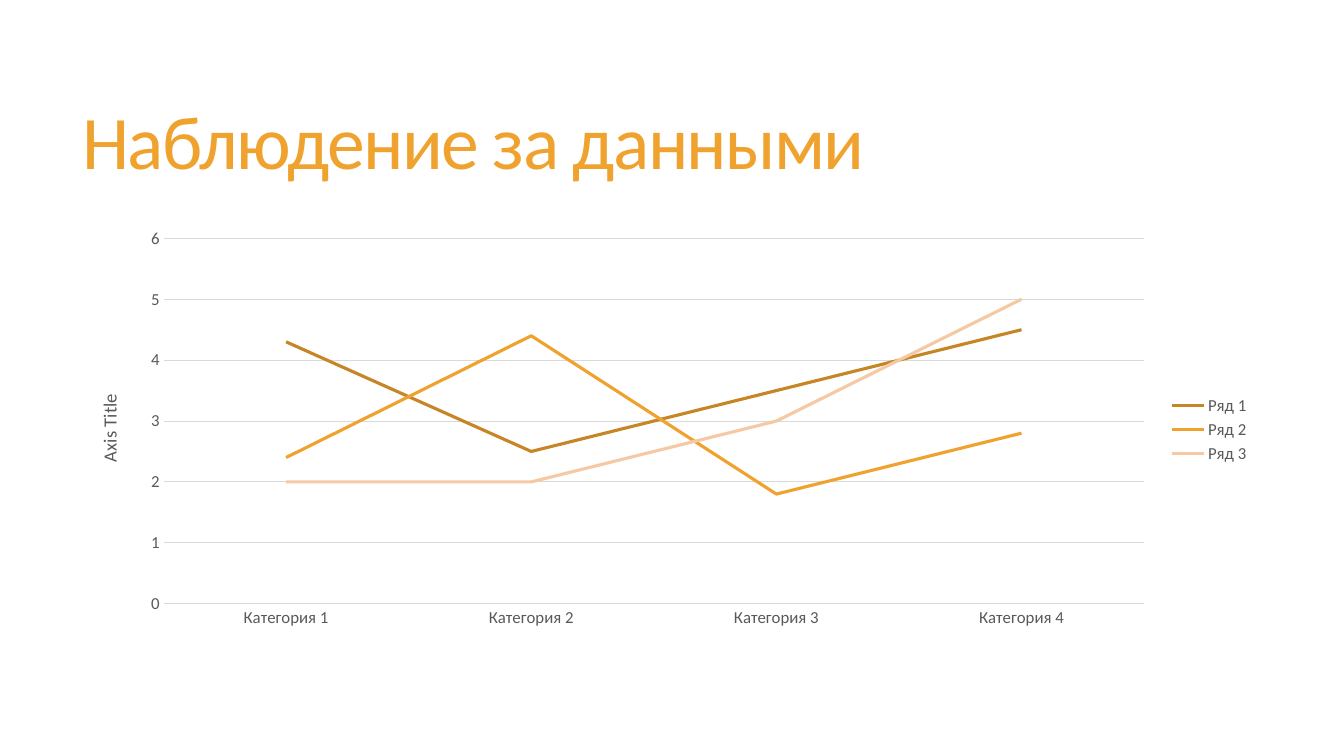
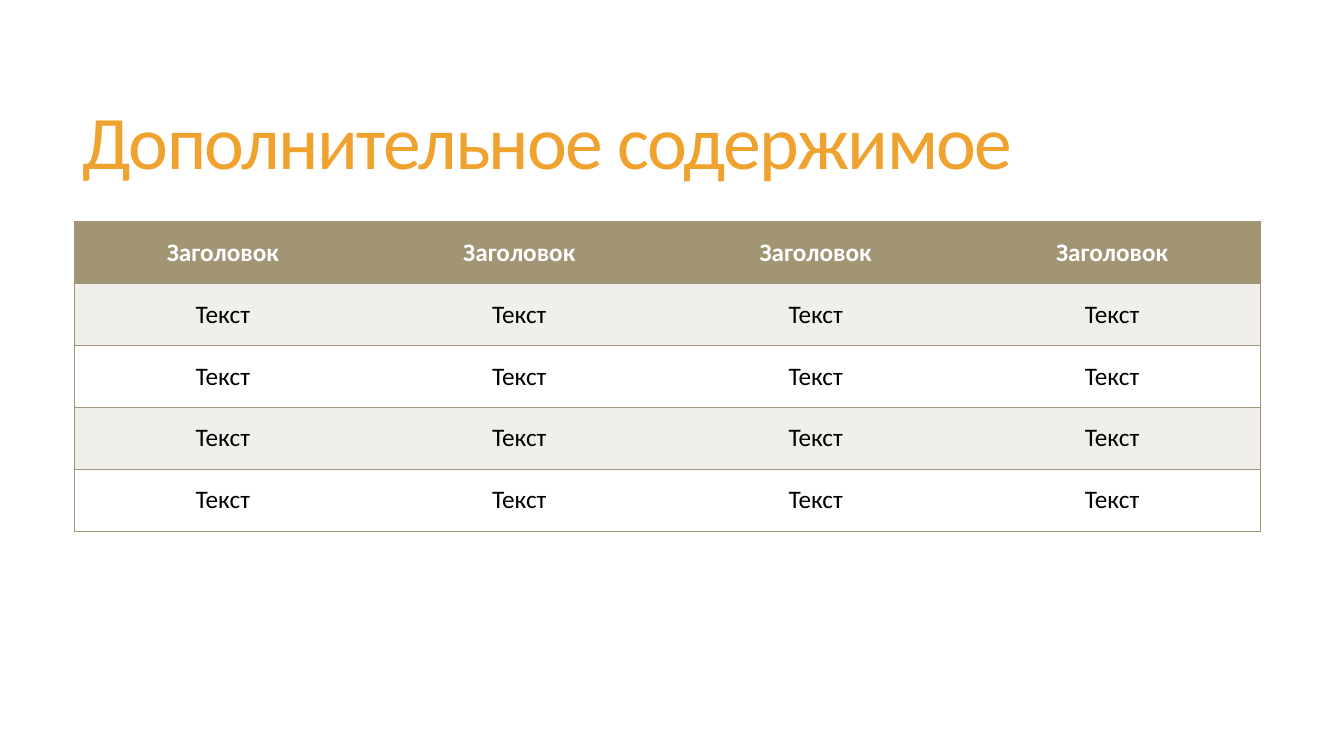
from lxml.etree import SubElement
from pptx import Presentation
from pptx.chart.data import CategoryChartData
from pptx.dml.color import RGBColor
from pptx.enum.chart import XL_CHART_TYPE, XL_LEGEND_POSITION, XL_TICK_MARK
from pptx.enum.text import MSO_ANCHOR, MSO_AUTO_SIZE, PP_ALIGN
from pptx.oxml.ns import qn
from pptx.util import Inches, Pt

FONT = "Calibri"
AMBER = RGBColor(0xF0, 0xA2, 0x2E)
BRONZE = RGBColor(0xC7, 0x86, 0x26)
PEACH = RGBColor(0xF5, 0xC9, 0xA4)
KHAKI = RGBColor(0xA1, 0x95, 0x74)
PALE = RGBColor(0xF0, 0xEF, 0xEB)
WHITE = RGBColor(0xFF, 0xFF, 0xFF)
BLACK = RGBColor(0, 0, 0)
GRAY = RGBColor(0x59, 0x59, 0x59)
GRID_GRAY = RGBColor(0xD9, 0xD9, 0xD9)

deck = Presentation()
deck.slide_width, deck.slide_height = Inches(13.33), Inches(7.5)
COL, ROW = deck.slide_width / 180, deck.slide_height / 75
LEFT, TOP, WIDTH = int(10 * COL), int(22 * ROW), int(158.8 * COL)


def write(frame, text, size, color, bold=False, align=PP_ALIGN.LEFT, spacing=None, tracking=None):
    paragraph = frame.paragraphs[0]
    paragraph.alignment = align
    if spacing:
        paragraph.line_spacing = spacing
    run = paragraph.add_run()
    run.text = text
    run.font.name, run.font.size, run.font.bold = FONT, Pt(size), bold
    run.font.color.rgb = color
    if tracking:
        run.font._element.set("spc", str(tracking))


def add_titled_slide(heading):
    slide = deck.slides.add_slide(deck.slide_layouts[5])
    title = slide.shapes.title
    title.left, title.top = int(9.7 * COL), int(5.5 * ROW)
    title.width, title.height = int(159 * COL), int(18.1 * ROW)
    title.text_frame.word_wrap = True
    title.text_frame.auto_size = MSO_AUTO_SIZE.NONE
    title.text_frame.vertical_anchor = MSO_ANCHOR.MIDDLE
    write(title.text_frame, heading, 54, AMBER, spacing=0.85, tracking=-120)
    return slide


chart_slide = add_titled_slide("Наблюдение за данными")
observations = CategoryChartData()
observations.categories = [f"Категория {number}" for number in range(1, 5)]
rows_of_values = [(4.3, 2.5, 3.5, 4.5), (2.4, 4.4, 1.8, 2.8), (2, 2, 3, 5)]
for number, values in enumerate(rows_of_values, 1):
    observations.add_series(f"Ряд {number}", values)
chart = chart_slide.shapes.add_chart(
    XL_CHART_TYPE.LINE, LEFT, TOP, WIDTH, int(41.2 * ROW), observations).chart
chart.has_title = False
chart.font.name, chart.font.size = FONT, Pt(12)
chart.font.color.rgb = GRAY
chart.has_legend = True
chart.legend.position = XL_LEGEND_POSITION.RIGHT
chart.legend.include_in_layout = False
for series, color in zip(chart.series, (BRONZE, AMBER, PEACH)):
    series.smooth = False
    series.format.line.color.rgb = color
    series.format.line.width = Pt(2.25)

categories, scale = chart.category_axis, chart.value_axis
for axis in (categories, scale):
    axis.major_tick_mark = axis.minor_tick_mark = XL_TICK_MARK.NONE
scale.minimum_scale, scale.maximum_scale, scale.major_unit = 0, 6, 1
scale.format.line.fill.background()
for line in (categories.format.line, scale.major_gridlines.format.line):
    line.color.rgb = GRID_GRAY
    line.width = Pt(0.75)
scale_title = scale.axis_title.text_frame
write(scale_title, "Axis Title", 13.3, GRAY, align=PP_ALIGN.CENTER)
scale_title._txBody.find(qn("a:bodyPr")).set("rot", "-5400000")

plot_area = chart._chartSpace.chart.plotArea
for automatic in plot_area.findall(qn("c:layout")):
    plot_area.remove(automatic)
layout = SubElement(plot_area, qn("c:layout"))
plot_area.insert(0, layout)
manual = SubElement(layout, qn("c:manualLayout"))
for tag, value in (("layoutTarget", "inner"), ("xMode", "edge"), ("yMode", "edge"),
                   ("x", 0.075), ("y", 0.04), ("w", 0.827), ("h", 0.88)):
    SubElement(manual, qn(f"c:{tag}")).set("val", str(value))

table_slide = add_titled_slide("Дополнительное содержимое")
ROWS, COLUMNS = 5, 4
table = table_slide.shapes.add_table(
    ROWS, COLUMNS, LEFT, TOP, WIDTH, int(30.7 * ROW)).table
table.first_row = table.horz_banding = False
for row in range(ROWS):
    for column in range(COLUMNS):
        cell = table.cell(row, column)
        cell.vertical_anchor = MSO_ANCHOR.MIDDLE
        edges = {"L": column == 0, "R": column == COLUMNS - 1, "T": True, "B": True}
        for side, visible in edges.items():
            border = SubElement(cell._tc.get_or_add_tcPr(), qn(f"a:ln{side}"), w=str(Pt(1)))
            if visible:
                fill = SubElement(border, qn("a:solidFill"))
                SubElement(fill, qn("a:srgbClr"), val=str(KHAKI))
            else:
                SubElement(border, qn("a:noFill"))
        header = row == 0
        cell.fill.solid()
        cell.fill.fore_color.rgb = KHAKI if header else PALE if row % 2 else WHITE
        write(cell.text_frame, "Заголовок" if header else "Текст", 18,
              WHITE if header else BLACK, bold=header, align=PP_ALIGN.CENTER)

deck.save("out.pptx")
